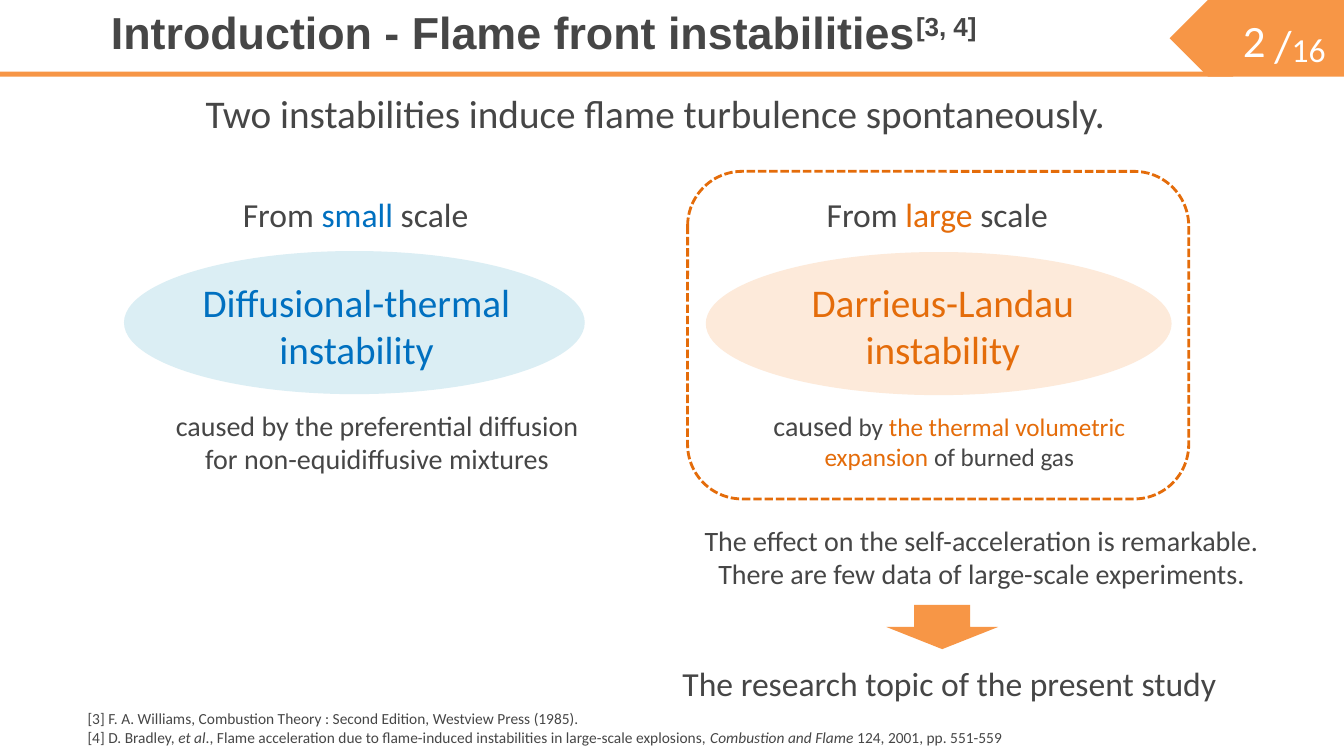
from pptx import Presentation
from pptx.dml.color import RGBColor
from pptx.enum.dml import MSO_LINE
from pptx.enum.shapes import MSO_SHAPE
from pptx.enum.text import MSO_ANCHOR, MSO_AUTO_SIZE, PP_ALIGN
from pptx.util import Inches, Pt

LEFT, CENTER, RIGHT = PP_ALIGN.LEFT, PP_ALIGN.CENTER, PP_ALIGN.RIGHT
TOP, MIDDLE = MSO_ANCHOR.TOP, MSO_ANCHOR.MIDDLE
FIT_NONE, FIT_SHAPE = MSO_AUTO_SIZE.NONE, MSO_AUTO_SIZE.SHAPE_TO_FIT_TEXT
TITLE_ONLY = 5

GREY, WHITE = "464646", "FFFFFF"
ORANGE, DEEP_ORANGE, PALE_ORANGE = "F79646", "E46C0A", "FDEADA"
BLUE, PALE_BLUE = "0070C0", "DBEEF4"


def rgb(color):
    return RGBColor.from_string(color)


def add_run(paragraph, text, size=20, color=GREY, font="Calibri",
            bold=False, italic=False, baseline=0):
    """Append formatted text; baseline is a rise in percent."""
    run = paragraph.add_run()
    run.text = text
    run.font.name, run.font.size = font, Pt(size)
    run.font.bold, run.font.italic = bold, italic
    run.font.color.rgb = rgb(color)
    if baseline:
        run.font._element.set("baseline", str(baseline * 1000))


class SlideBuilder:
    def __init__(self, slide):
        self.slide = slide

    def fill_text(self, frame, paragraphs, align, **style):
        """Write paragraphs, each a list of strings or (string, overrides) pairs."""
        for index, runs in enumerate(paragraphs):
            paragraph = frame.add_paragraph() if index else frame.paragraphs[0]
            paragraph.alignment = align
            for run in runs:
                text, overrides = (run, {}) if isinstance(run, str) else run
                add_run(paragraph, text, **{**style, **overrides})

    def title(self, box, runs, **style):
        shape = self.slide.shapes.title
        shape.left, shape.top, shape.width, shape.height = map(Inches, box)
        frame = shape.text_frame
        frame.auto_size, frame.vertical_anchor = FIT_NONE, MIDDLE
        self.fill_text(frame, [runs], LEFT, **style)

    def text(self, box, *paragraphs, align=LEFT, wrap=True, fit=FIT_SHAPE, **style):
        frame = self.slide.shapes.add_textbox(*map(Inches, box)).text_frame
        frame.word_wrap, frame.auto_size = wrap, fit
        frame.vertical_anchor = TOP
        self.fill_text(frame, paragraphs, align, **style)

    def shape(self, kind, box, fill=None, outline=None, rotation=0):
        shape = self.slide.shapes.add_shape(kind, *map(Inches, box))
        shape.shadow.inherit = False
        shape.rotation = rotation
        if fill:
            shape.fill.solid()
            shape.fill.fore_color.rgb = rgb(fill)
        else:
            shape.fill.background()
        if outline:
            shape.line.color.rgb = rgb(outline)
            shape.line.width = Pt(2)
            shape.line.dash_style = MSO_LINE.SQUARE_DOT
        else:
            shape.line.fill.background()

    def instability(self, ellipse, name_box, name, scale_box, scale, color, pale):
        self.shape(MSO_SHAPE.OVAL, ellipse, fill=pale)
        self.text(name_box, [name], align=CENTER, size=28, color=color)
        self.text(scale_box, ["From ", (scale, {"color": color}), " scale"],
                  wrap=False, size=24)


def main():
    presentation = Presentation()
    presentation.slide_width, presentation.slide_height = Inches(13.33), Inches(7.5)
    layout = presentation.slide_layouts[TITLE_ONLY]
    builder = SlideBuilder(presentation.slides.add_slide(layout))

    # Header and page number
    builder.shape(MSO_SHAPE.PENTAGON, (11.6, 0, 1.74, 0.76), ORANGE, rotation=180)
    builder.shape(MSO_SHAPE.RECTANGLE, (0, 0.71, 12.23, 0.05), ORANGE)
    builder.text((11.6, 0.08, 1.05, 0.46), ["2"], align=RIGHT, fit=FIT_NONE,
                 size=32, color=WHITE)
    builder.text((12.54, 0.13, 0.72, 0.64), ["/", ("16", {"size": 24})],
                 wrap=False, size=32, color=WHITE)
    builder.title((1, 0, 10.6, 0.63),
                  ["Introduction - Flame front instabilities",
                   ("[3, 4]", {"baseline": 30})],
                  size=32, font="Arial", bold=True)
    builder.text((1.94, 0.84, 9.22, 0.57),
                 ["Two instabilities induce flame turbulence spontaneously."],
                 wrap=False, size=28)

    # The two instabilities and their causes
    builder.instability((1.23, 2.49, 4.57, 1.42), (1.33, 2.71, 4.41, 1.04),
                        "Diffusional-thermal instability",
                        (2.31, 1.87, 2.46, 0.5), "small", BLUE, PALE_BLUE)
    builder.text((1.59, 4, 4.3, 0.77),
                 ["caused by the preferential diffusion for non-equidiffusive mixtures"],
                 align=CENTER)
    builder.instability((7, 2.5, 4.62, 1.42), (7.29, 2.71, 4.12, 1.04),
                        "Darrieus-Landau instability",
                        (8.1, 1.87, 2.42, 0.5), "large", DEEP_ORANGE, PALE_ORANGE)
    builder.text((7.42, 4, 3.99, 0.74),
                 [("caused", {"size": 20}), " by ",
                  ("the thermal volumetric expansion ", {"color": DEEP_ORANGE}),
                  "of burned gas"],
                 align=CENTER, size=18)

    # Research topic
    builder.shape(MSO_SHAPE.ROUNDED_RECTANGLE, (6.82, 1.7, 4.97, 3.25),
                  outline=DEEP_ORANGE)
    builder.text((6.82, 5.14, 5.83, 0.77),
                 ["The effect on the self-acceleration is remarkable."],
                 ["There are few data of large-scale experiments."],
                 align=CENTER, wrap=False)
    builder.shape(MSO_SHAPE.DOWN_ARROW, (8.79, 6, 1.11, 0.44), ORANGE)
    builder.text((6.67, 6.53, 5.68, 0.5),
                 ["The research topic of the present study"], wrap=False, size=24)

    # References
    builder.text((0.77, 6.99, 9.83, 0.47),
                 ["[3] F. A. Williams, Combustion Theory : Second Edition, "
                  "Westview Press (1985)."],
                 ["[4] D. Bradley, ", ("et al", {"italic": True}),
                  "., Flame acceleration due to flame-induced instabilities in "
                  "large-scale explosions, ",
                  ("Combustion and Flame", {"italic": True}),
                  " 124, 2001, pp. 551-559"],
                 size=11)

    presentation.save("out.pptx")


if __name__ == "__main__":
    main()
